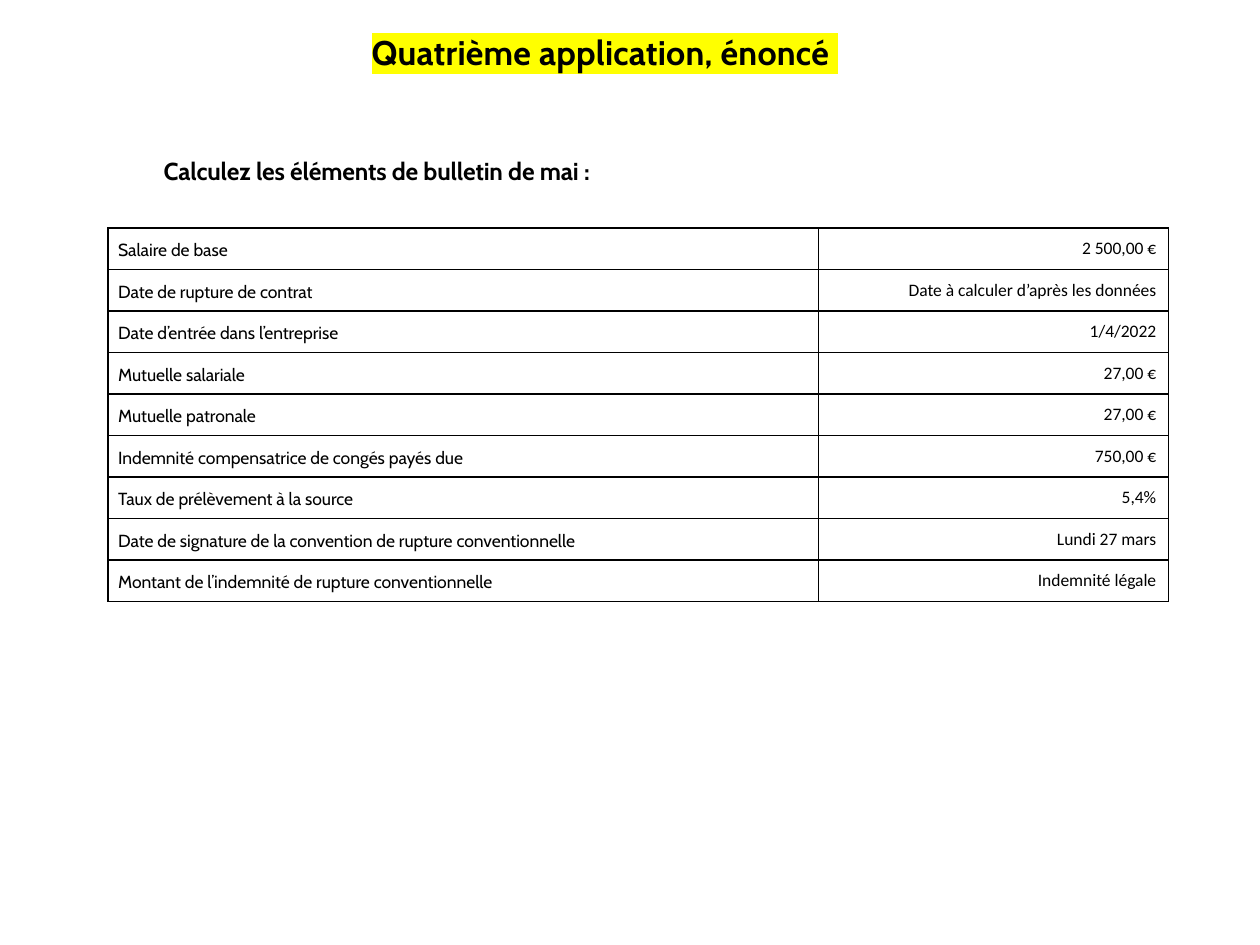
from lxml import etree
from pptx import Presentation
from pptx.dml.color import RGBColor
from pptx.enum.text import MSO_ANCHOR, PP_ALIGN
from pptx.oxml.ns import qn
from pptx.util import Cm, Pt

LEFT, CENTER, RIGHT = PP_ALIGN.LEFT, PP_ALIGN.CENTER, PP_ALIGN.RIGHT
MIDDLE = MSO_ANCHOR.MIDDLE

COLORS = {"text": "000000", "border": "000000", "highlight": "FFFF00"}
HEADING_FONT, VALUE_FONT = "Cabin", "Calibri"

TITLE = "Quatrième application, énoncé "
INSTRUCTION = "Calculez les éléments de bulletin de mai :"
PAYSLIP_ITEMS = [
    ("Salaire de base", "2 500,00 €"),
    ("Date de rupture de contrat", "Date à calculer d’après les données"),
    ("Date d’entrée dans l’entreprise", "1/4/2022"),
    ("Mutuelle salariale", "27,00 €"),
    ("Mutuelle patronale", "27,00 €"),
    ("Indemnité compensatrice de congés payés due", "750,00 €"),
    ("Taux de prélèvement à la source", "5,4%"),
    ("Date de signature de la convention de rupture conventionnelle", "Lundi 27 mars"),
    ("Montant de l’indemnité de rupture conventionnelle", "Indemnité légale"),
]
COLUMN_WIDTHS = (Cm(14.32), Cm(7.06))
ROW_HEIGHT = Cm(0.836)


def add_run(paragraph, text, size, font, bold=False):
    run = paragraph.add_run()
    run.text = text
    run.font.size = Pt(size)
    run.font.name = font
    run.font.bold = bold
    run.font.color.rgb = RGBColor.from_string(COLORS["text"])
    return run


def add_heading(slide, text, box, size, line_height, align, spacing):
    frame = slide.shapes.add_textbox(*map(Cm, box)).text_frame
    frame.word_wrap = True
    frame.margin_left = frame.margin_top = frame.margin_right = frame.margin_bottom = 0
    paragraph = frame.paragraphs[0]
    paragraph.alignment = align
    paragraph.line_spacing = Pt(line_height)
    run = add_run(paragraph, text, size, HEADING_FONT, bold=True)
    run.font._element.set("spc", str(spacing))
    return run


def highlight(run, color):
    mark = etree.Element(qn("a:highlight"))
    etree.SubElement(mark, qn("a:srgbClr"), val=color)
    run.font._element.find(qn("a:solidFill")).addnext(mark)


def set_borders(cell):
    properties = cell._tc.get_or_add_tcPr()
    for position, side in enumerate(("lnL", "lnR", "lnT", "lnB")):
        line = etree.Element(qn(f"a:{side}"), w=str(Pt(1)))
        fill = etree.SubElement(line, qn("a:solidFill"))
        etree.SubElement(fill, qn("a:srgbClr"), val=COLORS["border"])
        properties.insert(position, line)


def fill_cell(cell, text, font, align):
    cell.fill.background()
    cell.vertical_anchor = MIDDLE
    set_borders(cell)
    paragraph = cell.text_frame.paragraphs[0]
    paragraph.alignment = align
    add_run(paragraph, text, 10, font)
    return paragraph


def add_payslip(slide):
    table = slide.shapes.add_table(
        len(PAYSLIP_ITEMS), len(COLUMN_WIDTHS), Cm(2.18), Cm(4.6),
        sum(COLUMN_WIDTHS), ROW_HEIGHT * len(PAYSLIP_ITEMS),
    ).table
    table.first_row = table.horz_banding = False
    for column, width in zip(table.columns, COLUMN_WIDTHS):
        column.width = width
    for index, (label, value) in enumerate(PAYSLIP_ITEMS):
        table.rows[index].height = ROW_HEIGHT
        label_cell, value_cell = table.rows[index].cells
        label_cell.margin_left = Cm(0.2)
        label_cell.margin_top = label_cell.margin_right = label_cell.margin_bottom = 0
        paragraph = fill_cell(label_cell, label, HEADING_FONT, LEFT)
        paragraph.line_spacing = Pt(14)
        paragraph.space_before, paragraph.space_after = Pt(6), Pt(5)
        fill_cell(value_cell, value, VALUE_FONT, RIGHT)


def main():
    presentation = Presentation()
    presentation.slide_width, presentation.slide_height = Cm(25.4), Cm(19.05)
    slide = presentation.slides.add_slide(presentation.slide_layouts[6])
    title = add_heading(slide, TITLE, (1.6, 0.69, 21.18, 0.89), 19.5, 22, CENTER, 10)
    highlight(title, COLORS["highlight"])
    add_heading(slide, INSTRUCTION, (3.3, 3.18, 17.88, 0.64), 14, 16, LEFT, -10)
    add_payslip(slide)
    presentation.save("out.pptx")


if __name__ == "__main__":
    main()
